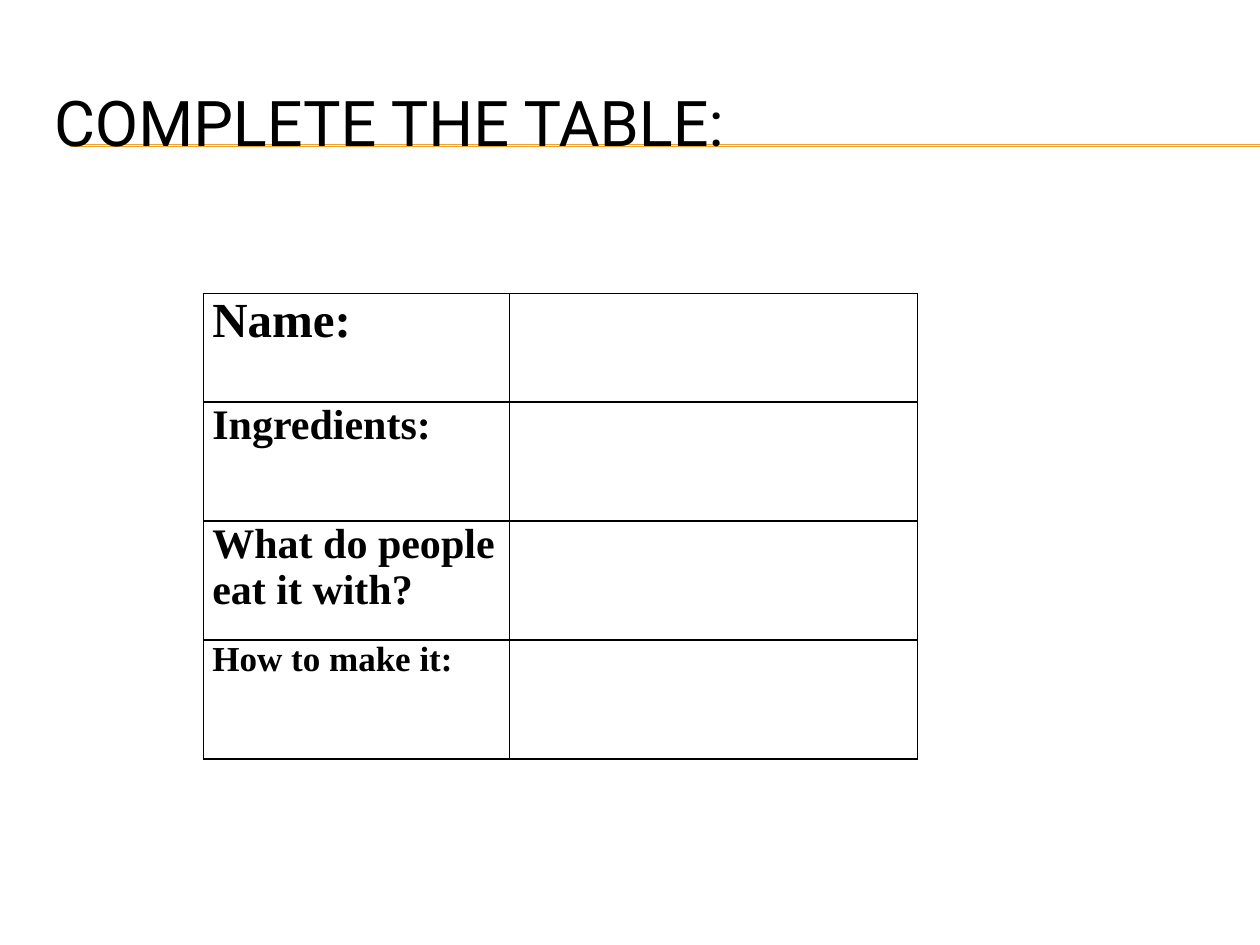
from lxml import etree
from pptx import Presentation
from pptx.dml.color import RGBColor
from pptx.enum.shapes import MSO_CONNECTOR
from pptx.enum.text import MSO_ANCHOR
from pptx.oxml import parse_xml
from pptx.oxml.ns import nsdecls, qn
from pptx.util import Cm, Pt

BLACK = RGBColor(0x00, 0x00, 0x00)
AMBER = RGBColor(0xF0, 0xA2, 0x2E)

SLIDE_WIDTH, SLIDE_HEIGHT = 25.4, 19.05
RULE_LEFT = 1.42
RULE_HEIGHTS = (2.92, 2.95)
COLUMN_WIDTHS = (6.17, 8.23)
ROW_HEIGHTS = (2.18, 2.4, 2.4, 2.4)
PROMPTS = (
    ("Name:", 28),
    ("Ingredients:", 24),
    ("What do people eat it with?", 24),
    ("How to make it:", 20),
)


def apply_format(target, values):
    for attribute, value in values.items():
        setattr(target, attribute, value)


def write(frame, text, color, **font_format):
    paragraph = frame.paragraphs[0]
    run = paragraph.add_run()
    run.text = text
    apply_format(run.font, font_format)
    run.font.color.rgb = color


def add_rule(slide, y):
    rule = slide.shapes.add_connector(
        MSO_CONNECTOR.STRAIGHT, Cm(RULE_LEFT), Cm(y), Cm(SLIDE_WIDTH), Cm(y))
    rule.line.color.rgb = AMBER
    rule.line.width = Pt(0.75)
    etree.SubElement(rule._element.spPr, qn("a:effectLst"))


def add_title(slide, text):
    title = slide.shapes.add_textbox(Cm(0.84), Cm(1.27), Cm(24.13), Cm(2.34))
    apply_format(title.text_frame, {
        "word_wrap": True, "vertical_anchor": MSO_ANCHOR.MIDDLE})
    write(title.text_frame, text, BLACK, name="Roboto", size=Pt(36))


def add_borders(cell):
    """Draw all four sides; the schema wants them ahead of the cell fill."""
    properties = cell._tc.get_or_add_tcPr()
    for index, side in enumerate(("lnL", "lnR", "lnT", "lnB")):
        properties.insert(index, parse_xml(
            f'<a:{side} {nsdecls("a")} w="{Pt(1)}"><a:solidFill>'
            f'<a:srgbClr val="{BLACK}"/></a:solidFill></a:{side}>'))


def add_prompt_table(slide):
    table = slide.shapes.add_table(
        len(PROMPTS), len(COLUMN_WIDTHS), Cm(4.1), Cm(5.92),
        Cm(sum(COLUMN_WIDTHS)), Cm(sum(ROW_HEIGHTS))).table
    apply_format(table, {"first_row": False, "horz_banding": False})
    for column, width in zip(table.columns, COLUMN_WIDTHS):
        column.width = Cm(width)
    for row, height, (prompt, size) in zip(table.rows, ROW_HEIGHTS, PROMPTS):
        row.height = Cm(height)
        for cell in row.cells:
            apply_format(cell, {
                "margin_left": Cm(0.18), "margin_right": Cm(0.18),
                "margin_top": 0, "margin_bottom": 0})
            cell.fill.background()
            add_borders(cell)
        write(row.cells[0].text_frame, prompt, BLACK,
              name="Times New Roman", size=Pt(size), bold=True)


def main():
    presentation = Presentation()
    apply_format(presentation, {
        "slide_width": Cm(SLIDE_WIDTH), "slide_height": Cm(SLIDE_HEIGHT)})
    slide = presentation.slides.add_slide(presentation.slide_layouts[6])
    for y in RULE_HEIGHTS:
        add_rule(slide, y)
    add_title(slide, "COMPLETE THE TABLE:")
    add_prompt_table(slide)
    presentation.save("out.pptx")


if __name__ == "__main__":
    main()
